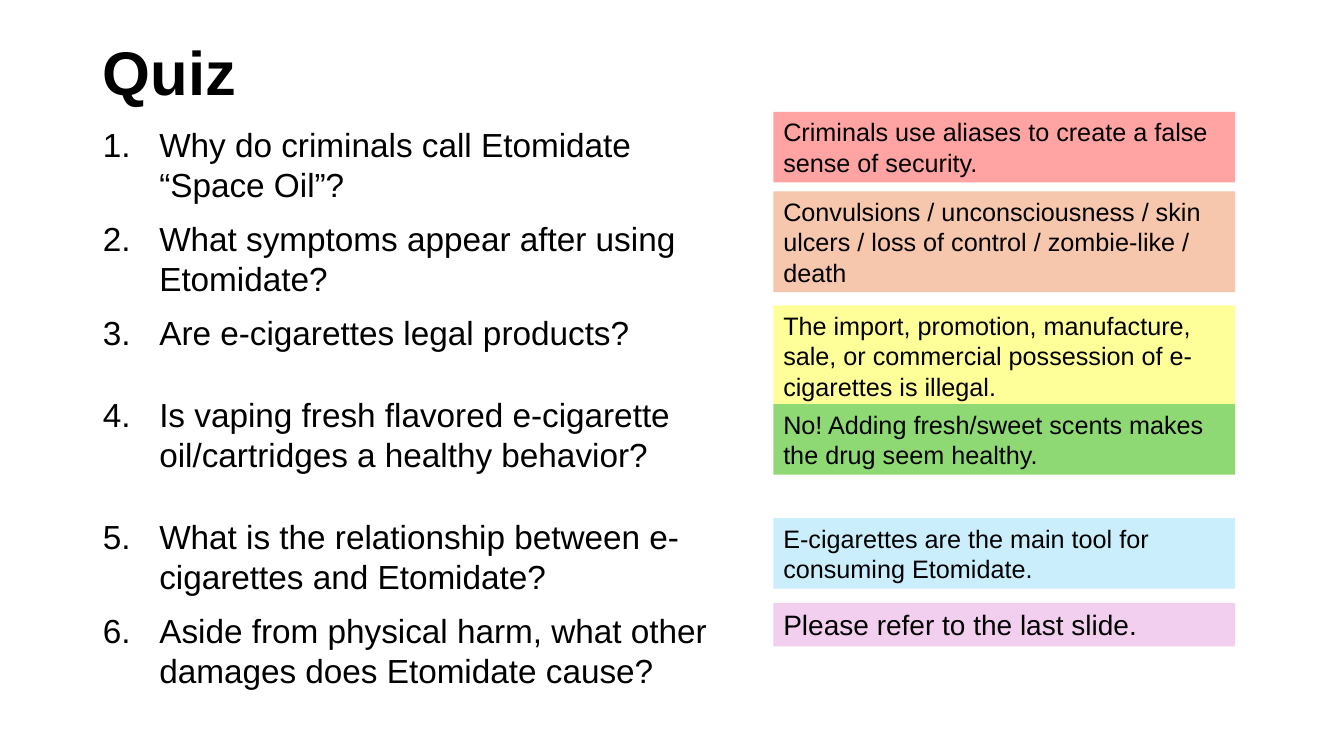
"""Build a quiz slide with numbered questions and coloured answer boxes."""
from lxml import etree
from pptx import Presentation
from pptx.dml.color import RGBColor
from pptx.enum.shapes import MSO_SHAPE
from pptx.enum.text import MSO_ANCHOR, MSO_AUTO_SIZE, PP_ALIGN
from pptx.oxml.ns import qn
from pptx.util import Inches, Pt

RECT = MSO_SHAPE.RECTANGLE
TOP, MIDDLE = MSO_ANCHOR.TOP, MSO_ANCHOR.MIDDLE
LEFT = PP_ALIGN.LEFT
FIXED, GROW = MSO_AUTO_SIZE.NONE, MSO_AUTO_SIZE.SHAPE_TO_FIT_TEXT

FONT = "Arial"
COLORS = {
    "text": "000000",
    "red": "FFA3A3",
    "peach": "F6C6AD",
    "yellow": "FFFF99",
    "green": "8ED973",
    "blue": "CAEEFB",
    "pink": "F2CFEE",
}
TITLE = "Quiz"
NEAR, FAR = 10, 30
QUESTIONS = [
    ("Why do criminals call Etomidate “Space Oil”?", NEAR),
    ("What symptoms appear after using Etomidate?", NEAR),
    ("Are e-cigarettes legal products?", NEAR),
    ("Is vaping fresh flavored e-cigarette oil/cartridges a healthy behavior?", FAR),
    ("What is the relationship between e-cigarettes and Etomidate?", FAR),
    ("Aside from physical harm, what other damages does Etomidate cause?", NEAR),
]
ANSWERS = [
    ("Criminals use aliases to create a false sense of security.", "red", 1.11, 2, 18),
    ("Convulsions / unconsciousness / skin ulcers / loss of control / zombie-like / death",
     "peach", 1.9, 3, 18),
    ("The import, promotion, manufacture, sale, or commercial possession of e-cigarettes is illegal.",
     "yellow", 3.03, 3, 18),
    ("No! Adding fresh/sweet scents makes the drug seem healthy.", "green", 4.01, 2, 18),
    ("E-cigarettes are the main tool for consuming Etomidate.", "blue", 5.14, 2, 18),
    ("Please refer to the last slide.", "pink", 5.98, 1, 20),
]
WIDE, HIGH = 13.33, 7.5
EDGE, COL, SPAN = 0.92, 7.67, 4.58
PAD, LEAD = 0.1, 1.2 / 72
INDENT = 0.56


def color(name):
    return RGBColor.from_string(COLORS[name])


def place(shape, *box):
    shape.left, shape.top, shape.width, shape.height = map(Inches, box)


def style(para, size, bold=False):
    para.alignment = LEFT
    for run in para.runs:
        font = run.font
        font.name, font.size, font.bold = FONT, Pt(size), bold
        font.color.rgb = color("text")


def number(para):
    props = para._p.get_or_add_pPr()
    props.set("marL", str(Inches(INDENT)))
    props.set("indent", str(-Inches(INDENT)))
    face = etree.SubElement(props, qn("a:buFont"))
    face.set("typeface", FONT)
    mark = etree.SubElement(props, qn("a:buAutoNum"))
    mark.set("type", "arabicPeriod")


def add_title(slide):
    title = slide.shapes.title
    place(title, EDGE, 0.12, 11.5, 1.25)
    frame = title.text_frame
    frame.text = TITLE
    frame.auto_size, frame.vertical_anchor = FIXED, MIDDLE
    para = frame.paragraphs[0]
    para.line_spacing = 0.9
    style(para, 44, True)


def add_list(slide):
    body = slide.placeholders[1]
    place(body, EDGE, 1.18, 6.51, 6.2)
    frame = body.text_frame
    frame.text = "\n".join(text for text, gap in QUESTIONS)
    frame.auto_size, frame.vertical_anchor = FIXED, TOP
    for para, (text, gap) in zip(frame.paragraphs, QUESTIONS):
        para.line_spacing = Pt(28.6)
        para.space_before, para.space_after = Pt(gap), Pt(0)
        style(para, 23.8)
        number(para)


def add_answer(slide, text, fill, top, rows, size):
    high = PAD + rows * size * LEAD
    box = slide.shapes.add_shape(RECT, *map(Inches, (COL, top, SPAN, high)))
    box.shadow.inherit = False
    box.fill.solid()
    box.fill.fore_color.rgb = color(fill)
    box.line.fill.background()
    frame = box.text_frame
    frame.text = text
    frame.word_wrap, frame.auto_size = True, GROW
    frame.vertical_anchor = TOP
    style(frame.paragraphs[0], size)


def main():
    deck = Presentation()
    deck.slide_width, deck.slide_height = Inches(WIDE), Inches(HIGH)
    slide = deck.slides.add_slide(deck.slide_layouts[1])
    add_title(slide)
    add_list(slide)
    for answer in ANSWERS:
        add_answer(slide, *answer)
    deck.save("out.pptx")


if __name__ == "__main__":
    main()
